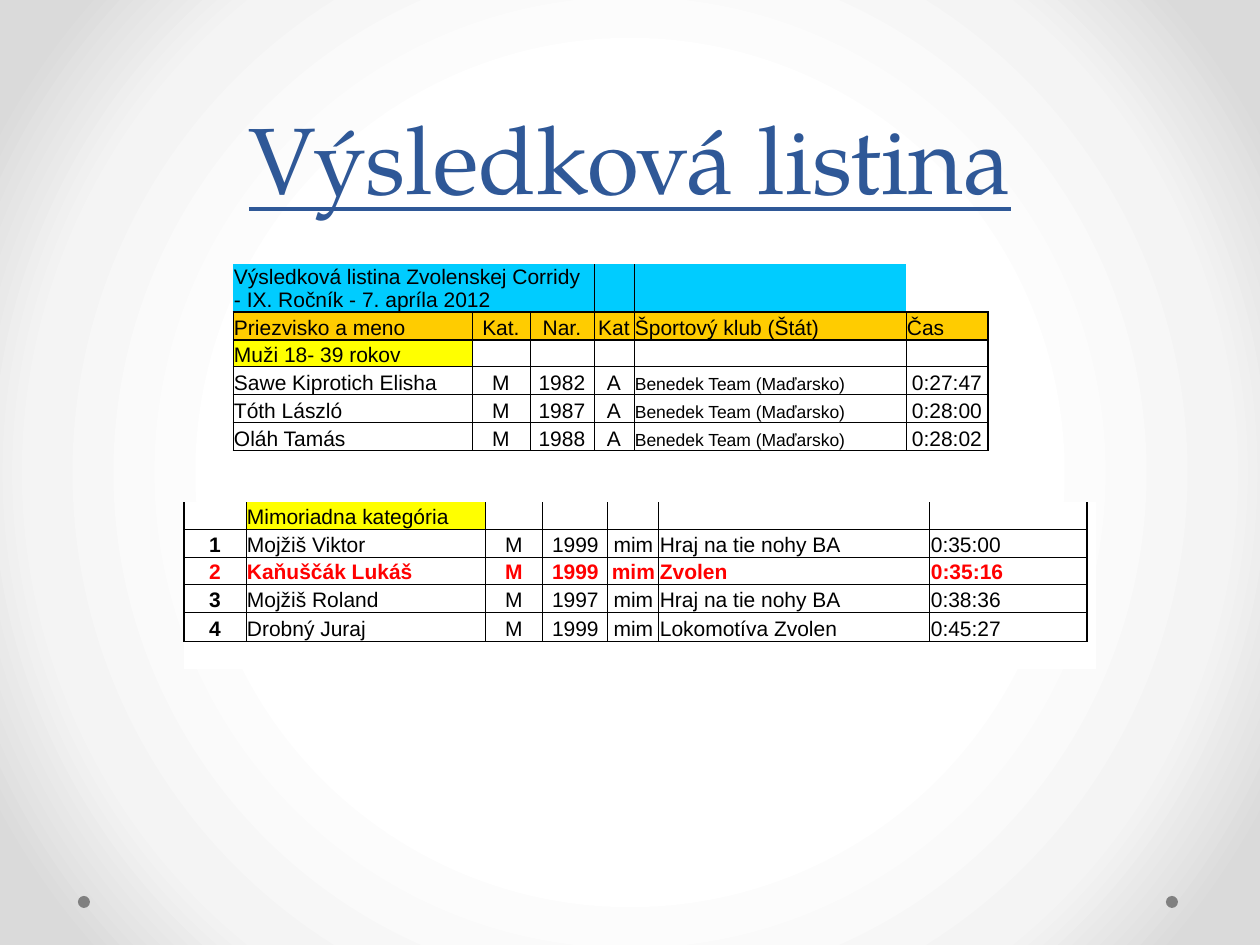
from lxml.etree import SubElement
from pptx import Presentation
from pptx.dml.color import RGBColor
from pptx.enum.shapes import MSO_SHAPE as Shape
from pptx.enum.text import MSO_ANCHOR as Anchor, PP_ALIGN as Align
from pptx.oxml import parse_xml
from pptx.oxml.ns import nsdecls, qn
from pptx.util import Emu, Pt

BLACK = RGBColor(0x00, 0x00, 0x00)
WHITE = RGBColor(0xFF, 0xFF, 0xFF)
RED = RGBColor(0xFF, 0x00, 0x00)
BLUE = RGBColor(0x2F, 0x58, 0x97)
CYAN = RGBColor(0x00, 0xCC, 0xFF)
ORANGE = RGBColor(0xFF, 0xCC, 0x00)
YELLOW = RGBColor(0xFF, 0xFF, 0x00)
GREY = RGBColor(0x80, 0x80, 0x80)
PALE = RGBColor(0xF4, 0xF4, 0xF4)
SILVER = RGBColor(0xDA, 0xDA, 0xDA)


def px(length):
    return Emu(round(length * 914400 / 126))


def write(frame, text, font="Arial", size=12, color=BLACK, bold=False,
          underline=False, align=Align.LEFT):
    paragraph = frame.paragraphs[0]
    paragraph.alignment = align
    if not text:
        SubElement(paragraph._p, qn("a:endParaRPr"), sz=str(size * 100))
        return paragraph
    run = paragraph.add_run()
    run.text = text
    run.font.name = font
    run.font.size = Pt(size)
    run.font.color.rgb = color
    run.font.bold = bold
    run.font.underline = underline
    return paragraph


presentation = Presentation()
presentation.slide_width = px(1260)
presentation.slide_height = px(945)
slide = presentation.slides.add_slide(presentation.slide_layouts[5])

stops = "".join(
    f'<a:gs pos="{position * 1000}"><a:srgbClr val="{color}"/></a:gs>'
    for position, color in ((50, WHITE), (76, PALE), (92, SILVER)))
slide.element.cSld.insert(0, parse_xml(
    f'<p:bg {nsdecls("p", "a")}><p:bgPr><a:gradFill rotWithShape="1">'
    f'<a:gsLst>{stops}</a:gsLst><a:path path="circle">'
    '<a:fillToRect l="50000" t="50000" r="50000" b="50000"/></a:path>'
    '</a:gradFill><a:effectLst/></p:bgPr></p:bg>'))

for left in (1166, 78):
    dot = slide.shapes.add_shape(Shape.OVAL, px(left), px(896), px(12), px(12))
    dot.shadow.inherit = False
    dot.fill.solid()
    dot.fill.fore_color.rgb = GREY
    dot.line.fill.background()

title = slide.shapes.title
title.left, title.top, title.width, title.height = px(63), px(0), px(1134), px(220)
title.text_frame.word_wrap = True
title.text_frame.vertical_anchor = Anchor.BOTTOM
heading = write(title.text_frame, "Výsledková listina", font="TeX Gyre Pagella",
                size=54, color=BLUE, underline=True, align=Align.CENTER)
heading.line_spacing = Pt(58)

CLUB = "Benedek Team (Maďarsko)"
RESULTS = {
    "at": (233, 264),
    "columns": (239, 58, 64, 40, 272, 82),
    "heights": (48, 28, 26, 28, 28, 28),
    "rows": (
        ("Výsledková listina Zvolenskej Corridy - IX. Ročník - 7. apríla 2012",
         "", "", "", "", ""),
        ("Priezvisko a meno", "Kat.", "Nar.", "Kat", "Športový klub (Štát)", "Čas"),
        ("Muži 18- 39 rokov", "", "", "", "", ""),
        ("Sawe Kiprotich Elisha", "M", "1982", "A", CLUB, "0:27:47"),
        ("Tóth László", "M", "1987", "A", CLUB, "0:28:00"),
        ("Oláh Tamás", "M", "1988", "A", CLUB, "0:28:02"),
    ),
    "fills": {**{(0, column): CYAN for column in range(5)},
              **{(1, column): ORANGE for column in range(6)}, (2, 0): YELLOW},
    "centred": {(row, column) for row in range(1, 6) for column in (1, 2, 3)}
               | {(row, 5) for row in (3, 4, 5)},
    "row_lines": (0, 1, 1, 0.5, 0.5, 0.5, 0.5),
    "column_lines": (0.5, 0.5, 0.5, 0.5, 0.5, 0.5, 1),
    "open_row": 0,
    "open_lines": (0, 0.5, 0.5, 0.5, 0.5, 0, 0),
    "ruled_columns": 6,
    "merged": 3,
    "red_row": None,
}
SPECIAL = {
    "at": (184, 502),
    "columns": (62, 239, 58, 65, 51, 271, 157, 9),
    "heights": (27, 28, 27, 28, 29, 28),
    "rows": (
        ("", "Mimoriadna kategória", "", "", "", "", "", ""),
        ("1", "Mojžiš Viktor", "M", "1999", "mim", "Hraj na tie nohy BA", "0:35:00", ""),
        ("2", "Kaňuščák Lukáš", "M", "1999", "mim", "Zvolen", "0:35:16", ""),
        ("3", "Mojžiš Roland", "M", "1997", "mim", "Hraj na tie nohy BA", "0:38:36", ""),
        ("4", "Drobný Juraj", "M", "1999", "mim", "Lokomotíva Zvolen", "0:45:27", ""),
        ("",) * 8,
    ),
    "fills": {(0, 1): YELLOW},
    "centred": {(row, column) for row in range(1, 5) for column in (0, 2, 3, 4)},
    "row_lines": (0, 0.5, 0.5, 0.5, 0.5, 0.5, 0),
    "column_lines": (1, 0.5, 0.5, 0.5, 0.5, 0.5, 0.5, 1, 0),
    "open_row": 5,
    "open_lines": (0,) * 9,
    "ruled_columns": 7,
    "merged": 1,
    "red_row": 2,
}

for data in (RESULTS, SPECIAL):
    left, top = data["at"]
    frame = slide.shapes.add_table(
        len(data["rows"]), len(data["columns"]), px(left), px(top),
        px(sum(data["columns"])), px(sum(data["heights"])))
    table = frame.table
    table.first_row = table.horz_banding = False
    for column, width in zip(table.columns, data["columns"]):
        column.width = px(width)
    for row, height in zip(table.rows, data["heights"]):
        row.height = px(height)
    if data["merged"] > 1:
        table.cell(0, 0).merge(table.cell(0, data["merged"] - 1))

    for r, texts in enumerate(data["rows"]):
        verticals = data["open_lines" if r == data["open_row"] else "column_lines"]
        for c, text in enumerate(texts):
            cell = table.cell(r, c)
            cell.vertical_anchor = Anchor.BOTTOM
            cell.margin_left = cell.margin_right = cell.margin_top = px(1)
            cell.margin_bottom = 0
            is_red = r == data["red_row"]
            write(cell.text_frame, text, size=10 if text == CLUB else 12,
                  color=RED if is_red else BLACK,
                  bold=is_red or (data is SPECIAL and c == 0),
                  align=Align.CENTER if (r, c) in data["centred"] else Align.LEFT)

            ruled = c < data["ruled_columns"]
            right = data["merged"] if (r, c) == (0, 0) else c + 1
            borders = {
                "L": verticals[c],
                "R": verticals[right],
                "T": data["row_lines"][r] if ruled else 0,
                "B": data["row_lines"][r + 1] if ruled else 0,
            }
            properties = cell._tc.get_or_add_tcPr()
            for side, weight in borders.items():
                line = SubElement(properties, qn(f"a:ln{side}"), w=str(Pt(weight)))
                if weight:
                    solid = SubElement(line, qn("a:solidFill"))
                    SubElement(solid, qn("a:srgbClr"), val=str(BLACK))
                else:
                    SubElement(line, qn("a:noFill"))
            cell.fill.solid()
            cell.fill.fore_color.rgb = data["fills"].get((r, c), WHITE)

presentation.save("out.pptx")
